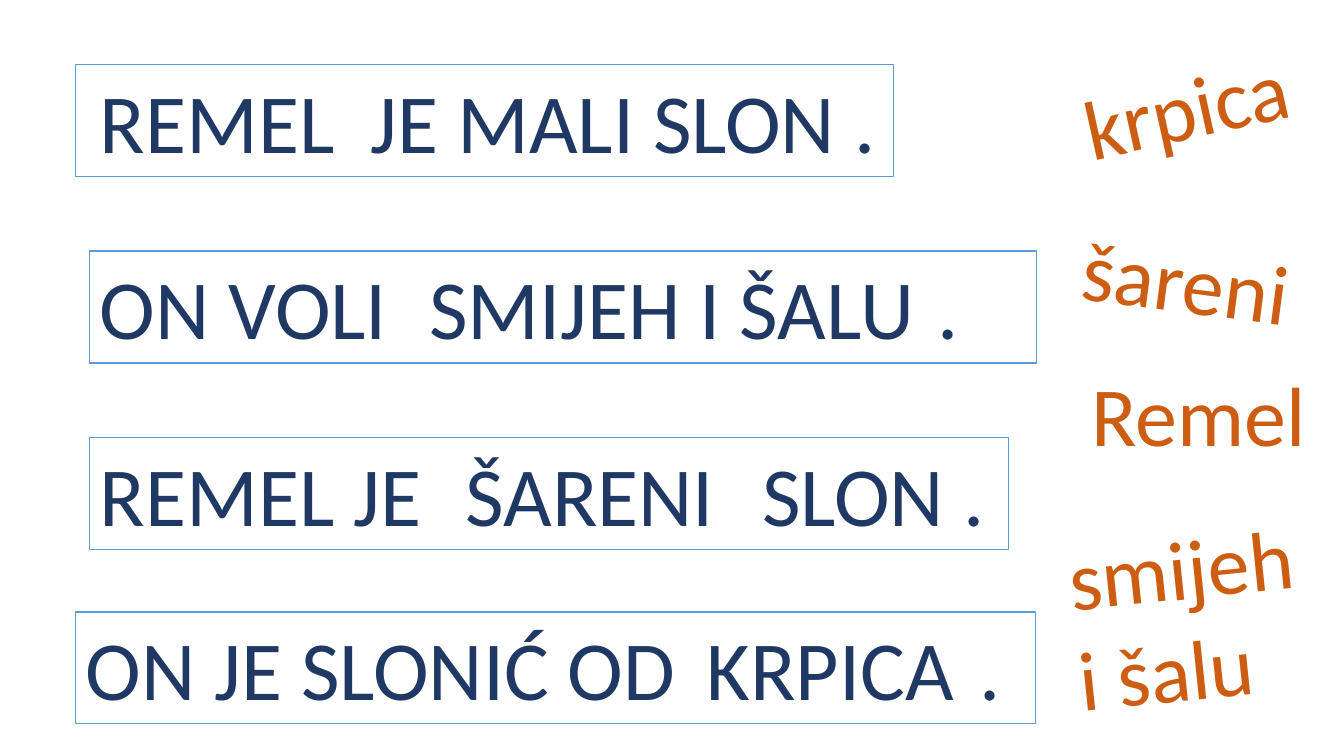
from dataclasses import dataclass

from lxml.etree import SubElement
from pptx import Presentation
from pptx.dml.color import RGBColor
from pptx.enum.shapes import MSO_SHAPE
from pptx.enum.text import MSO_ANCHOR, MSO_AUTO_SIZE, PP_ALIGN
from pptx.oxml.ns import qn
from pptx.util import Inches, Pt


@dataclass(frozen=True)
class Theme:
    font: str = "Calibri"
    size: Pt = Pt(60)
    sentence: RGBColor = RGBColor(0x20, 0x38, 0x64)
    word: RGBColor = RGBColor(0xCC, 0x5D, 0x12)
    paper: RGBColor = RGBColor(0xFF, 0xFF, 0xFF)
    border: RGBColor = RGBColor(0x5B, 0x9B, 0xD5)
    border_width: Pt = Pt(1)


THEME = Theme()
WIDTH, HEIGHT = Inches(13.33), Inches(7.5)
LINE_HEIGHT = 14.8

# All lengths are percentages of the slide's width or height.
# Sentence: left, top, width, text, tab stop; answer: text, offset, width
SENTENCES = [
    (5.63, 8.53, 60.84, "\tJE MALI SLON .", 21.23, "REMEL", 1.05, 20.63),
    (6.68, 33.2, 70.44, "ON VOLI\t.", 62.34, "SMIJEH I ŠALU", 24.53, 38.86),
    (6.68, 57.87, 68.34, "REMEL JE\tSLON .", 49.3, "ŠARENI", 27.23, 21.16),
    (5.63, 80.93, 71.42, "ON JE SLONIĆ OD\t.", 66.5, "KRPICA", 46.21, 19.95),
]
# Word: box, text, rotation in degrees
WORDS = [
    ((79.82, 6.53, 17.7, LINE_HEIGHT), "krpica", -12.5),
    ((79.82, 29.73, 17.7, LINE_HEIGHT), "šareni", 7.5),
    ((80.5, 47.33, 17.7, LINE_HEIGHT), "Remel", 0),
    ((79.14, 67.47, 19.13, 28.27), "smijeh i šalu", -5.9),
]


def across(share):
    return int(WIDTH * share / 100)


def down(share):
    return int(HEIGHT * share / 100)


def to_lengths(box):
    left, top, width, height = box
    return across(left), down(top), across(width), down(height)


def write(sp, text, color):
    tf = sp.text_frame
    tf.word_wrap = True
    tf.auto_size = MSO_AUTO_SIZE.SHAPE_TO_FIT_TEXT
    tf.vertical_anchor = MSO_ANCHOR.TOP
    p = tf.paragraphs[0]
    p.alignment = PP_ALIGN.LEFT
    r = p.add_run()
    r.text = text
    r.font.name = THEME.font
    r.font.size = THEME.size
    r.font.color.rgb = color
    return p


def set_tab(p, share):
    """Put one left tab stop where the text after the gap begins."""
    tabs = SubElement(p._p.get_or_add_pPr(), qn("a:tabLst"))
    SubElement(tabs, qn("a:tab"), pos=str(across(share)), algn="l")


def add_words(s, box, text, color, rotation=0):
    sp = s.shapes.add_textbox(*to_lengths(box))
    sp.rotation = rotation
    write(sp, text, color)


def add_sentence(s, box, text, tab):
    sp = s.shapes.add_shape(MSO_SHAPE.RECTANGLE, *to_lengths(box))
    sp.shadow.inherit = False
    sp.fill.solid()
    sp.fill.fore_color.rgb = THEME.paper
    sp.line.color.rgb = THEME.border
    sp.line.width = THEME.border_width
    set_tab(write(sp, text, THEME.sentence), tab)


def add_exercise(s):
    """Boxed sentences, with each answer laid over its gap."""
    for left, top, width, text, tab, answer, offset, answer_width in SENTENCES:
        add_sentence(s, (left, top, width, LINE_HEIGHT), text, tab)
        add_words(s, (left + offset, top, answer_width, LINE_HEIGHT),
                  answer, THEME.sentence)


def add_word_bank(s):
    for box, text, rotation in WORDS:
        add_words(s, box, text, THEME.word, rotation)


def main():
    prs = Presentation()
    prs.slide_width, prs.slide_height = WIDTH, HEIGHT
    s = prs.slides.add_slide(prs.slide_layouts[6])
    add_exercise(s)
    add_word_bank(s)
    prs.save("out.pptx")


if __name__ == "__main__":
    main()
